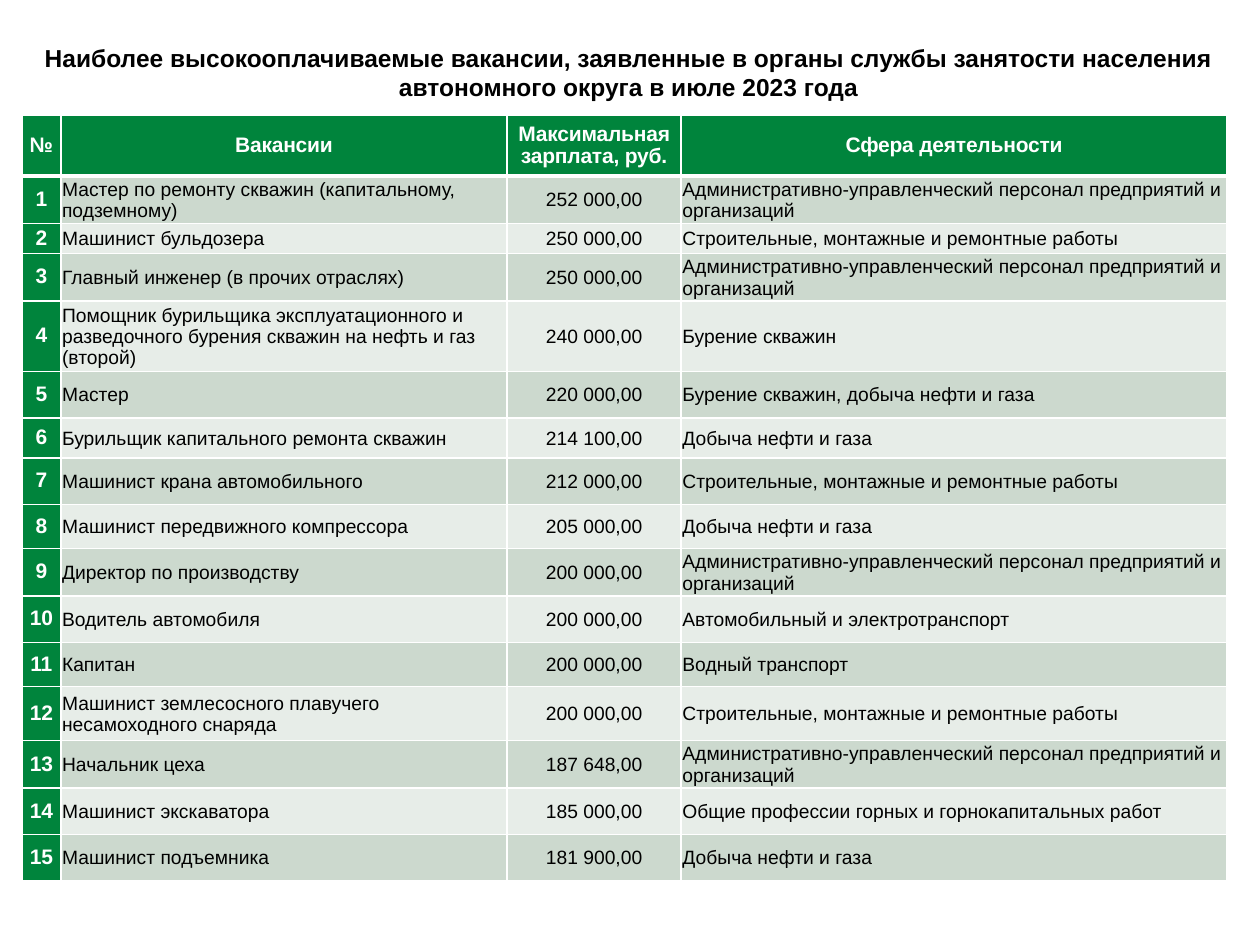
from dataclasses import dataclass

from lxml import etree
from pptx import Presentation
from pptx.dml.color import RGBColor
from pptx.enum import text
from pptx.oxml import ns
from pptx.util import Pt


@dataclass(frozen=True)
class Theme:
    font: str = "Arial"
    ink: str = "000000"
    white: str = "FFFFFF"
    green: str = "00843C"
    bands: tuple = ("CCD9CE", "E7EDE8")
    title_size: float = 14
    head_size: float = 12
    body_size: float = 11


THEME = Theme()
LEFT, CENTER = text.PP_ALIGN.LEFT, text.PP_ALIGN.CENTER


def write(paragraph, words, size, color, bold, align):
    run = paragraph.add_run()
    run.text = words
    paragraph.alignment = align
    for name, value in {"name": THEME.font, "size": Pt(size), "bold": bold}.items():
        setattr(run.font, name, value)
    run.font.color.rgb = RGBColor.from_string(color)
    return run


def add_border(cell, side, width):
    line = etree.SubElement(cell._tc.get_or_add_tcPr(), ns.qn(f"a:ln{side}"), w=str(Pt(width)))
    fill = etree.SubElement(line, ns.qn("a:solidFill"))
    etree.SubElement(fill, ns.qn("a:srgbClr"), val=THEME.white)


MANAGEMENT = "Административно-управленческий персонал предприятий и организаций"
CONSTRUCTION = "Строительные, монтажные и ремонтные работы"
OIL_AND_GAS = "Добыча нефти и газа"

header = ("№", "Вакансии", "Максимальная зарплата, руб.", "Сфера деятельности")
vacancies = [
    ("Мастер по ремонту скважин (капитальному, подземному)", "252 000,00", MANAGEMENT),
    ("Машинист бульдозера", "250 000,00", CONSTRUCTION),
    ("Главный инженер (в прочих отраслях)", "250 000,00", MANAGEMENT),
    ("Помощник бурильщика эксплуатационного и разведочного бурения скважин на нефть и газ (второй)",
     "240 000,00", "Бурение скважин"),
    ("Мастер", "220 000,00", "Бурение скважин, добыча нефти и газа"),
    ("Бурильщик капитального ремонта скважин", "214 100,00", OIL_AND_GAS),
    ("Машинист крана автомобильного", "212 000,00", CONSTRUCTION),
    ("Машинист передвижного компрессора", "205 000,00", OIL_AND_GAS),
    ("Директор по производству", "200 000,00", MANAGEMENT),
    ("Водитель автомобиля", "200 000,00", "Автомобильный и электротранспорт"),
    ("Капитан", "200 000,00", "Водный транспорт"),
    ("Машинист землесосного плавучего несамоходного снаряда", "200 000,00", CONSTRUCTION),
    ("Начальник цеха", "187 648,00", MANAGEMENT),
    ("Машинист экскаватора", "185 000,00", "Общие профессии горных и горнокапитальных работ"),
    ("Машинист подъемника", "181 900,00", OIL_AND_GAS),
]
rows = [header] + [(str(number), *vacancy) for number, vacancy in enumerate(vacancies, 1)]
column_widths = (22.3, 255, 99.5, 312)
row_heights = (34.5, 16.6, 17.2, 17.2, 23, 26.5, 23, 26.5, 25.2, 23, 26.5, 25.2, 31, 26.5, 26.5, 26.5)
table_height = 437  # wrapped rows grow to this total

deck = Presentation()
deck.slide_width, deck.slide_height = Pt(720), Pt(540)
slide = deck.slides.add_slide(deck.slide_layouts[6])

title = slide.shapes.add_textbox(Pt(12.2), Pt(20.9), Pt(694), Pt(41)).text_frame
title.word_wrap = True
title.auto_size = text.MSO_AUTO_SIZE.SHAPE_TO_FIT_TEXT
write(title.paragraphs[0],
      "Наиболее высокооплачиваемые вакансии, заявленные в органы службы занятости "
      "населения автономного округа в июле 2023 года",
      THEME.title_size, THEME.ink, True, CENTER)

frame = slide.shapes.add_table(len(rows), len(header), Pt(12.5), Pt(66),
                               Pt(sum(column_widths)), Pt(table_height))
table = frame.table
for column, width in zip(table.columns, column_widths):
    column.width = Pt(width)
for row, height in zip(table.rows, row_heights):
    row.height = Pt(height)
frame.height = Pt(table_height)

for r, row in enumerate(rows):
    for c, words in enumerate(row):
        cell = table.cell(r, c)
        is_head = r == 0 or c == 0
        inset = Pt(0 if is_head else 0.7)
        cell_format = {
            "vertical_anchor": text.MSO_ANCHOR.MIDDLE,
            "margin_left": inset,
            "margin_top": inset,
            "margin_right": inset,
            "margin_bottom": 0,
        }
        for name, value in cell_format.items():
            setattr(cell, name, value)

        borders = {"L": 1, "R": 1, "T": 3 if r == 1 else 1, "B": 3 if r == 0 else 1}
        for side, width in borders.items():
            add_border(cell, side, width)
        cell.fill.solid()
        fill_color = THEME.green if is_head else THEME.bands[(r - 1) % 2]
        cell.fill.fore_color.rgb = RGBColor.from_string(fill_color)

        paragraph = cell.text_frame.paragraphs[0]
        if is_head:
            run = write(paragraph, words, THEME.head_size, THEME.white, True, CENTER)
            run.font._element.set("spc", "-10")
            paragraph.line_spacing = 0.96
        else:
            write(paragraph, words, THEME.body_size, THEME.ink, False, CENTER if c == 2 else LEFT)

deck.save("out.pptx")
